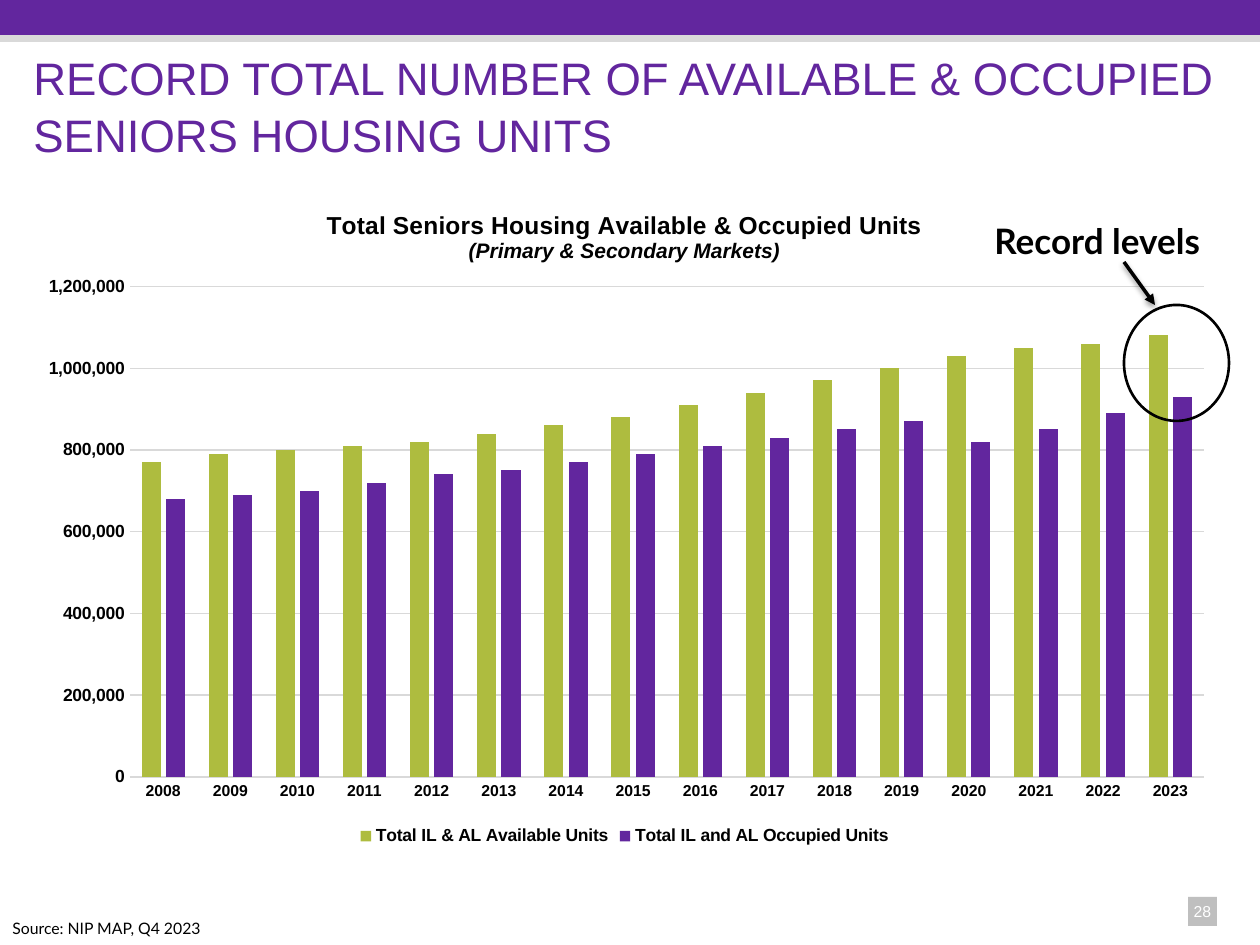
from dataclasses import dataclass

from lxml import etree
from pptx import Presentation
from pptx import util as u
from pptx.chart.data import CategoryChartData
from pptx.dml.color import RGBColor
from pptx.enum import chart as ch
from pptx.enum import shapes, text
from pptx.oxml import parse_xml
from pptx.oxml.ns import nsdecls, qn

EMU_PER_PX = 914400 / 126


def px(n):
    return u.Emu(round(n * EMU_PER_PX))


def rgb(code):
    return RGBColor.from_string(code)


@dataclass(frozen=True)
class Theme:
    purple: str = "62269E"
    green: str = "AEBC3F"
    rule: str = "D9D9D9"
    badge: str = "BFBFBF"
    white: str = "FFFFFF"
    black: str = "000000"
    sans: str = "Arial"
    accent: str = "Lato"
    title: int = 26
    callout: int = 20
    chart_title: int = 14
    chart_subtitle: int = 12
    label: int = 10
    small: int = 9


def set_font(font, name, size, color, bold=False, italic=False):
    font.name, font.size = name, u.Pt(size)
    font.bold, font.italic = bold, italic
    font.color.rgb = rgb(color)


def set_layout(element, index, inner=False, **fractions):
    """Place a chart part by fractions of the chart area."""
    for old in element.findall(qn("c:layout")):
        element.remove(old)
    layout = parse_xml(f"<c:layout {nsdecls('c')}><c:manualLayout/></c:layout>")
    manual = layout[0]
    if inner:
        etree.SubElement(manual, qn("c:layoutTarget")).set("val", "inner")
    for key in ("x", "y"):
        etree.SubElement(manual, qn(f"c:{key}Mode")).set("val", "edge")
    for key, value in fractions.items():
        etree.SubElement(manual, qn(f"c:{key}")).set("val", str(value))
    element.insert(index, layout)


class SlideBuilder:
    def __init__(self, slide, theme):
        self.slide, self.theme = slide, theme

    def shape(self, kind, box, fill=None, line=None, width=1.5):
        sp = self.slide.shapes.add_shape(kind, *map(px, box))
        sp.shadow.inherit = False
        if fill:
            sp.fill.solid()
            sp.fill.fore_color.rgb = rgb(fill)
        else:
            sp.fill.background()
        if line:
            sp.line.color.rgb = rgb(line)
            sp.line.width = u.Pt(width)
        else:
            sp.line.fill.background()

    def text(self, words, box, font, size, color, bold=False, wrap=True,
             align=text.PP_ALIGN.LEFT, anchor=text.MSO_ANCHOR.TOP, spacing=1.0):
        tf = self.slide.shapes.add_textbox(*map(px, box)).text_frame
        tf.word_wrap, tf.vertical_anchor = wrap, anchor
        p = tf.paragraphs[0]
        p.alignment, p.line_spacing = align, spacing
        r = p.add_run()
        r.text = words
        set_font(r.font, font, size, color, bold)

    def arrow(self, start, end, color, width):
        """Draw a straight arrow with a soft shadow below it."""
        line = self.slide.shapes.add_connector(
            shapes.MSO_CONNECTOR.STRAIGHT, *map(px, start + end))
        line.line.color.rgb = rgb(color)
        line.line.width = u.Pt(width)
        ln = line.line._get_or_add_ln()
        etree.SubElement(ln, qn("a:tailEnd")).set("type", "triangle")
        ln.addnext(parse_xml(
            f'<a:effectLst {nsdecls("a")}><a:outerShdw blurRad="39370" '
            f'dist="20320" dir="5400000" rotWithShape="0"><a:srgbClr val="{color}">'
            '<a:alpha val="38000"/></a:srgbClr></a:outerShdw></a:effectLst>'))

    def column_chart(self, box, categories, series, titles):
        """Series maps a name to (color, values); titles are (words, size, italic)."""
        t = self.theme
        data = CategoryChartData(number_format="#,##0")
        data.categories = categories
        for name, (_, values) in series.items():
            data.add_series(name, values)
        chart = self.slide.shapes.add_chart(
            ch.XL_CHART_TYPE.COLUMN_CLUSTERED, *map(px, box), data).chart
        set_font(chart.font, t.sans, t.label, t.black)

        plot = chart.plots[0]
        plot.gap_width, plot.overlap = 125, -27
        plot.vary_by_categories = False
        for item, (color, _) in zip(plot.series, series.values()):
            item.format.fill.solid()
            item.format.fill.fore_color.rgb = rgb(color)

        for axis, size in ((chart.category_axis, t.small), (chart.value_axis, t.label)):
            axis.major_tick_mark = axis.minor_tick_mark = ch.XL_TICK_MARK.NONE
            set_font(axis.tick_labels.font, t.sans, size, t.black, bold=True)
        values = chart.value_axis
        values.minimum_scale, values.maximum_scale = 0, 1200000
        values.major_unit = 200000
        values.tick_labels.number_format = "#,##0"
        values.tick_labels.number_format_is_linked = False
        values.format.line.fill.background()
        values.has_major_gridlines = True
        for line in (values.major_gridlines.format.line,
                     chart.category_axis.format.line):
            line.color.rgb = rgb(t.rule)
            line.width = u.Pt(0.75)

        chart.has_legend = True
        chart.legend.position = ch.XL_LEGEND_POSITION.BOTTOM
        chart.legend.include_in_layout = False
        set_font(chart.legend.font, t.sans, t.label, t.black, bold=True)

        chart.has_title = True
        tf = chart.chart_title.text_frame
        for i, (words, size, italic) in enumerate(titles):
            p = tf.add_paragraph() if i else tf.paragraphs[0]
            p.alignment = text.PP_ALIGN.CENTER
            r = p.add_run()
            r.text = words
            set_font(r.font, t.sans, size, t.black, True, italic)
        title = chart.chart_title._element
        set_layout(title, 1, x=0.25, y=0.04)
        plot_area = chart._chartSpace.find(f".//{qn('c:plotArea')}")
        set_layout(plot_area, 0, inner=True, x=0.09, y=0.16, w=0.89, h=0.73)


def main():
    t = Theme()
    prs = Presentation()
    prs.slide_width, prs.slide_height = px(1260), px(945)
    s = SlideBuilder(prs.slides.add_slide(prs.slide_layouts[6]), t)
    rect = shapes.MSO_SHAPE.RECTANGLE

    s.shape(rect, (1188, 897, 29, 29), t.badge)
    s.text("28", (1145, 896, 115, 32), t.sans, t.small, t.white,
           align=text.PP_ALIGN.CENTER)
    s.shape(rect, (0, 0, 1260, 42), t.purple)
    s.shape(rect, (0, 35, 1260, 7), t.rule)
    s.text("RECORD TOTAL NUMBER OF AVAILABLE & OCCUPIED SENIORS HOUSING UNITS",
           (21, 52, 1218, 116), t.sans, t.title, t.purple,
           anchor=text.MSO_ANCHOR.BOTTOM, spacing=1.05)
    s.text("Source: NIP MAP, Q4 2023", (0, 913, 546, 32), t.accent, t.small, t.black)

    available = [770, 790, 800, 810, 820, 840, 860, 880,
                 910, 940, 970, 1000, 1030, 1050, 1060, 1080]
    occupied = [680, 690, 700, 720, 740, 750, 770, 790,
                810, 830, 850, 870, 820, 850, 890, 930]
    s.column_chart(
        (21, 179, 1207, 672),
        [str(year) for year in range(2008, 2024)],
        {"Total IL & AL Available Units": (t.green, [v * 1000 for v in available]),
         "Total IL and AL Occupied Units": (t.purple, [v * 1000 for v in occupied])},
        [("Total Seniors Housing Available & Occupied Units", t.chart_title, False),
         ("(Primary & Secondary Markets)", t.chart_subtitle, True)])

    s.shape(shapes.MSO_SHAPE.OVAL, (1124, 305, 105, 116), line=t.black)
    s.arrow((1124, 262), (1155, 305), t.black, 2)
    s.text("Record levels", (982, 213, 247, 55), t.accent, t.callout, t.black,
           bold=True, wrap=False)
    prs.save("out.pptx")


if __name__ == "__main__":
    main()
